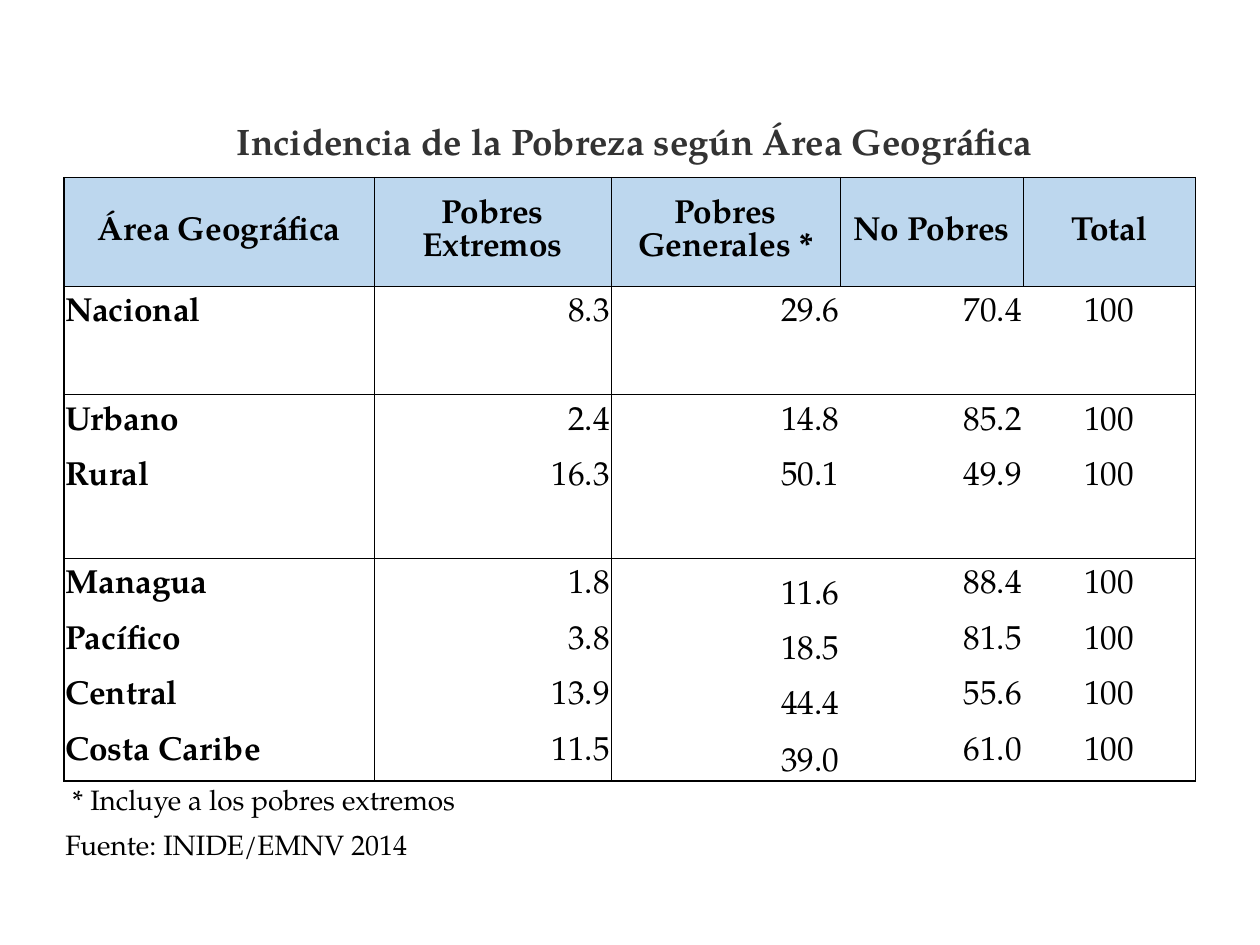
"""Build a slide with a table of poverty rates by geographic area."""
from lxml import etree
from pptx import Presentation
from pptx.dml.color import RGBColor
from pptx.enum.text import MSO_ANCHOR, PP_ALIGN
from pptx.oxml.ns import qn
from pptx.util import Inches, Pt

LEFT, MID, RIGHT = PP_ALIGN.LEFT, PP_ALIGN.CENTER, PP_ALIGN.RIGHT
CENTER, LOW = MSO_ANCHOR.MIDDLE, MSO_ANCHOR.BOTTOM
THEME = {
    "font": "TeX Gyre Pagella",
    "title": 21, "body": 19, "note": 16,
    "ink": "000000", "gray": "333333", "paper": "FFFFFF", "head": "BDD7EE",
    "thick": 1, "thin": 0.5,
}
THICK, THIN = THEME["thick"], THEME["thin"]

deck = Presentation()
deck.slide_width, deck.slide_height = Inches(10), Inches(7.5)
unit = deck.slide_width // 1000
slide = deck.slides.add_slide(deck.slide_layouts[6])

rows = [
    [" Incidencia de la Pobreza según Área Geográfica"],
    ["Área Geográfica", "Pobres Extremos", "Pobres Generales *", "No Pobres", "Total"],
    ["Nacional", "8.3", "29.6", "70.4", "100"],
    [],
    ["Urbano", "2.4", "14.8", "85.2", "100"],
    ["Rural", "16.3", "50.1", "49.9", "100"],
    [],
    ["Managua", "1.8", "11.6", "88.4", "100"],
    ["Pacífico", "3.8", "18.5", "81.5", "100"],
    ["Central", "13.9", "44.4", "55.6", "100"],
    ["Costa Caribe", "11.5", "39.0", "61.0", "100"],
    [" * Incluye a los pobres extremos"],
    ["Fuente: INIDE/EMNV 2014"],
]
widths = [246, 188, 182, 145, 137]
heights = [49, 86, 44, 42, 44, 44, 42, 44, 44, 44, 45, 36, 36]
aligns = [LEFT, RIGHT, RIGHT, RIGHT, MID]
TITLE, HEAD, FIRST, NOTE = 0, 1, 7, 11
across = {HEAD: THICK, 2: THIN, 4: THIN, FIRST: THIN, NOTE: THICK}
down = {0: THICK, 1: THIN, 2: THIN, 5: THICK}
split = {3: THIN, 4: THIN}

table = slide.shapes.add_table(
    len(rows), len(widths), 51 * unit, 92 * unit,
    sum(widths) * unit, sum(heights) * unit).table
table.first_row = table.horz_banding = False
for col, width in zip(table.columns, widths):
    col.width = width * unit
for row, height in zip(table.rows, heights):
    row.height = height * unit
for y, last in ((TITLE, 4), (NOTE, 1), (NOTE + 1, 1)):
    table.cell(y, 0).merge(table.cell(y, last))

for y, words in enumerate(rows):
    lines = {}
    if HEAD <= y < NOTE:
        lines = {**down, **split} if y == HEAD else down
    size = THEME["title" if y == TITLE else "note" if y >= NOTE else "body"]
    tint = {TITLE: THEME["paper"], HEAD: THEME["head"]}.get(y)
    for x, align in enumerate(aligns):
        cell = table.cell(y, x)
        low = x == 2 and FIRST <= y < NOTE
        form = {
            "margin_left": unit, "margin_right": unit,
            "margin_top": unit, "margin_bottom": 0,
            "vertical_anchor": LOW if low else CENTER,
        }
        for name, value in form.items():
            setattr(cell, name, value)

        props = cell._tc.get_or_add_tcPr()
        sides = {"lnL": lines.get(x), "lnR": lines.get(x + 1),
                 "lnT": across.get(y), "lnB": across.get(y + 1)}
        for side, weight in sides.items():
            line = etree.SubElement(props, qn("a:" + side))
            if weight:
                line.set("w", str(Pt(weight)))
                paint = etree.SubElement(line, qn("a:solidFill"))
                etree.SubElement(paint, qn("a:srgbClr"), val=THEME["ink"])
            else:
                etree.SubElement(line, qn("a:noFill"))
        if tint:
            cell.fill.solid()
            cell.fill.fore_color.rgb = RGBColor.from_string(tint)
        else:
            cell.fill.background()

        if x < len(words):
            para = cell.text_frame.paragraphs[0]
            para.alignment = MID if y <= HEAD else align
            run = para.add_run()
            run.text = words[x]
            style = {
                "name": THEME["font"], "size": Pt(size),
                "bold": y <= HEAD or (x == 0 and y < NOTE),
            }
            for name, value in style.items():
                setattr(run.font, name, value)
            ink = THEME["gray" if y == TITLE else "ink"]
            run.font.color.rgb = RGBColor.from_string(ink)

deck.save("out.pptx")
